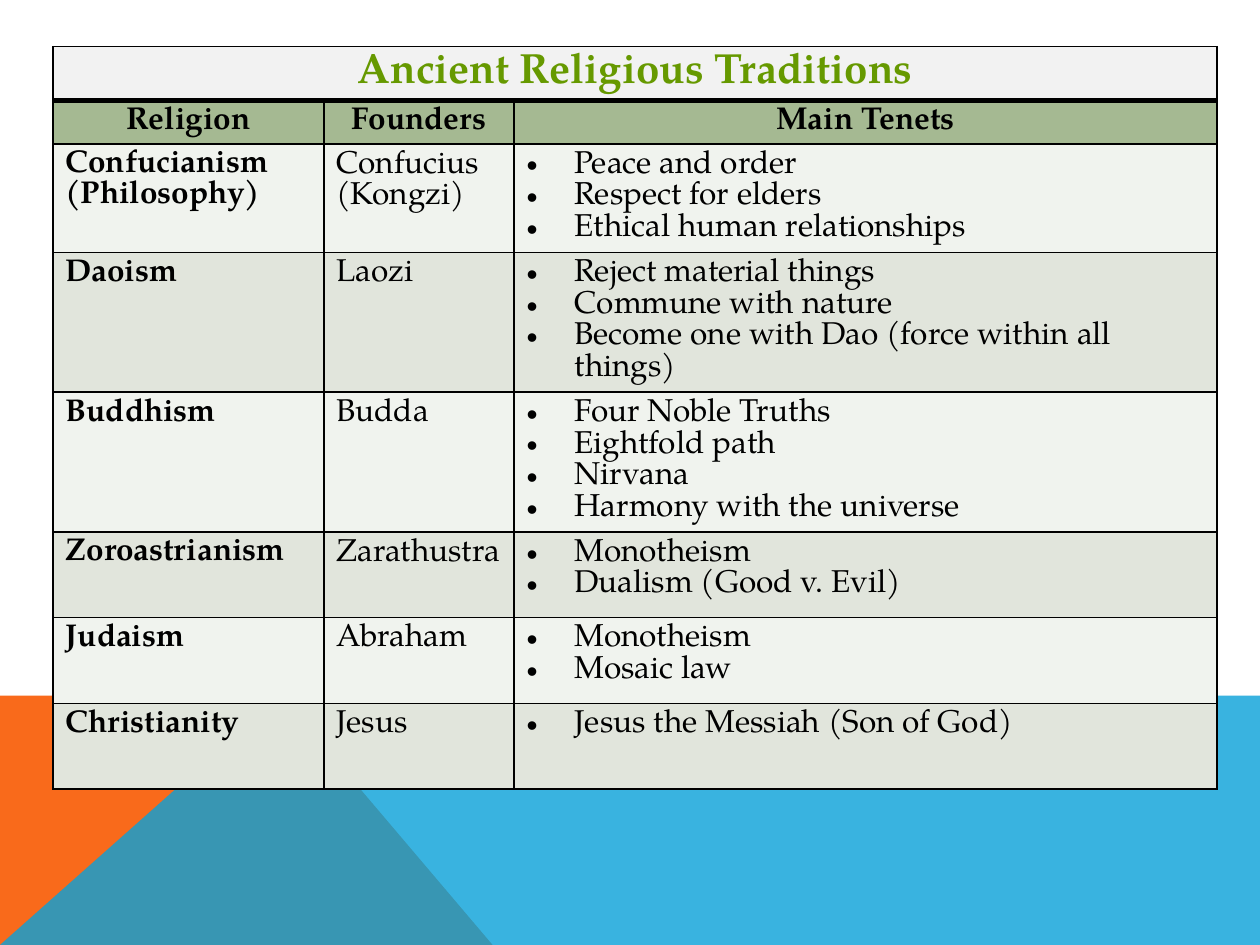
import pptx
import pptx.util
import pptx.dml.color
import pptx.enum.text
import pptx.oxml
import pptx.oxml.ns
from pptx.util import Inches

ALIGN = pptx.enum.text.PP_ALIGN
ANCHOR = pptx.enum.text.MSO_ANCHOR
NS = pptx.oxml.ns.nsdecls("a")


def rgb(color):
    return pptx.dml.color.RGBColor.from_string(color)


class Deck:
    font = "TeX Gyre Pagella"
    black = "000000"
    header = "A5B992"
    bands = ("F0F3EE", "E1E5DC")

    def __init__(self, width, height):
        self.prs = pptx.Presentation()
        self.prs.slide_width = Inches(width)
        self.prs.slide_height = Inches(height)
        self.s = self.prs.slides.add_slide(self.prs.slide_layouts[6])

    def polygon(self, points, color, alpha=100):
        pts = [(Inches(x), Inches(y)) for x, y in points]
        fb = self.s.shapes.build_freeform(*pts[0])
        fb.add_line_segments(pts[1:], close=True)
        sp = fb.convert_to_shape()
        sp.shadow.inherit = False
        sp.line.fill.background()
        sp.fill.solid()
        sp.fill.fore_color.rgb = rgb(color)
        if alpha < 100:
            clr = sp.fill._xPr.find(".//" + pptx.oxml.ns.qn("a:srgbClr"))
            clr.append(pptx.oxml.parse_xml(f'<a:alpha {NS} val="{alpha * 1000}"/>'))

    def table(self, x, y, widths, heights):
        frame = self.s.shapes.add_table(
            len(heights), len(widths), Inches(x), Inches(y),
            Inches(sum(widths)), Inches(sum(heights)))
        tbl = frame.table
        tbl.first_row = tbl.horz_banding = False
        for col, width in zip(tbl.columns, widths):
            col.width = Inches(width)
        for row, height in zip(tbl.rows, heights):
            row.height = Inches(height)
        return tbl

    def borders(self, cell, top=1, bottom=1):
        sides = {"L": 1, "R": 1, "T": top, "B": bottom}
        for i, (side, width) in enumerate(sides.items()):
            cell._tc.get_or_add_tcPr().insert(i, pptx.oxml.parse_xml(
                f'<a:ln{side} {NS} w="{width * 12700}"><a:solidFill>'
                f'<a:srgbClr val="{self.black}"/></a:solidFill></a:ln{side}>'))

    def bullet(self, p):
        pPr = p._p.get_or_add_pPr()
        pPr.set("marL", str(Inches(0.38)))
        pPr.set("indent", str(-Inches(0.38)))
        pPr.append(pptx.oxml.parse_xml(f'<a:buFont {NS} typeface="Arial"/>'))
        pPr.append(pptx.oxml.parse_xml(f'<a:buChar {NS} char="•"/>'))

    def run(self, p, text, size, bold, color):
        r = p.add_run()
        r.text = text
        r.font.name = self.font
        r.font.size = pptx.util.Pt(size)
        r.font.bold = bold
        r.font.color.rgb = rgb(color)

    def cell(self, cell, paragraphs, fill, size=18, bold=False, color=black,
             align=ALIGN.LEFT, anchor=ANCHOR.TOP, bullets=False):
        cell.fill.solid()
        cell.fill.fore_color.rgb = rgb(fill)
        cell.vertical_anchor = anchor
        tf = cell.text_frame
        for i, text in enumerate(paragraphs):
            p = tf.add_paragraph() if i else tf.paragraphs[0]
            p.alignment = align
            if bullets:
                self.bullet(p)
            for j, line in enumerate(text.split("\n")):
                if j:
                    p.add_line_break()
                self.run(p, line, size, bold, color)


HEADINGS = ["Religion", "Founders", "Main Tenets"]
RELIGIONS = [
    ("Confucianism\n(Philosophy)", "Confucius (Kongzi)",
     ["Peace and order", "Respect for elders", "Ethical human relationships"]),
    ("Daoism", "Laozi",
     ["Reject material things", "Commune with nature",
      "Become one with Dao (force within all things)"]),
    ("Buddhism", "Budda",
     ["Four Noble Truths", "Eightfold path", "Nirvana", "Harmony with the universe"]),
    ("Zoroastrianism", "Zarathustra", ["Monotheism", "Dualism (Good v. Evil)"]),
    ("Judaism", "Abraham", ["Monotheism", "Mosaic law"]),
    ("Christianity", "Jesus", ["Jesus the Messiah (Son of God)"]),
]


def main():
    deck = Deck(10, 7.5)
    deck.polygon([(0, 7.5), (0, 5.52), (2.23, 5.52), (3.91, 7.5)], "F96A1B")
    deck.polygon([(0, 7.5), (2.23, 5.52), (10, 5.52), (10, 7.5)], "08A1D9", 80)

    tbl = deck.table(0.42, 0.37, [2.15, 1.51, 5.58],
                     [0.42, 0.34, 0.86, 1.11, 1.11, 0.68, 0.68, 0.68])
    tbl.cell(0, 0).merge(tbl.cell(0, 2))
    deck.cell(tbl.cell(0, 0), ["Ancient Religious Traditions"], "F2F2F2",
              size=24, bold=True, color="669900", align=ALIGN.CENTER)
    for col, heading in enumerate(HEADINGS):
        deck.cell(tbl.cell(1, col), [heading], deck.header, bold=True,
                  align=ALIGN.CENTER, anchor=ANCHOR.MIDDLE)
    for i, (religion, founder, tenets) in enumerate(RELIGIONS):
        fill = deck.bands[i % 2]
        row = i + 2
        deck.cell(tbl.cell(row, 0), [religion], fill, bold=True)
        deck.cell(tbl.cell(row, 1), [founder], fill)
        deck.cell(tbl.cell(row, 2), tenets, fill, bullets=True)
    for row in range(len(tbl.rows)):
        for col in range(len(tbl.columns)):
            deck.borders(tbl.cell(row, col), top=3 if row == 1 else 1,
                         bottom=3 if row == 0 else 1)
    deck.prs.save("out.pptx")


if __name__ == "__main__":
    main()
